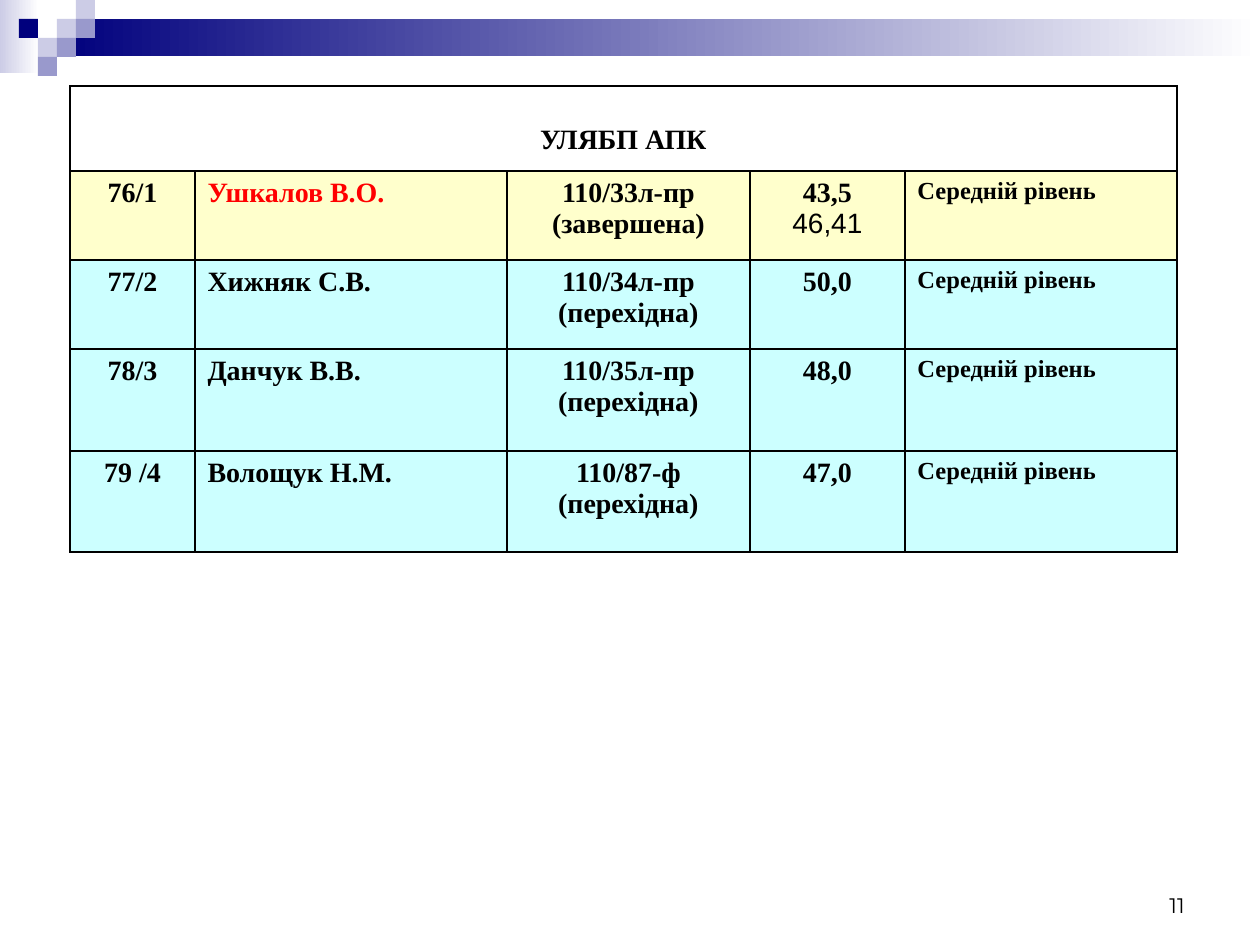
from dataclasses import dataclass

from lxml.etree import SubElement
from pptx import Presentation
from pptx.dml.color import RGBColor as RGB
from pptx.enum.shapes import MSO_SHAPE as Shape
from pptx.enum.text import MSO_ANCHOR as Anchor, PP_ALIGN as Align
from pptx.oxml.ns import qn
from pptx.util import Pt

PX = 914400 // 126


@dataclass(frozen=True)
class Theme:
    white: str = "FFFFFF"
    black: str = "000000"
    red: str = "FF0000"
    navy: str = "00007D"
    violet: str = "9999CC"
    lilac: str = "CCCCE6"
    yellow: str = "FFFFCC"
    cyan: str = "CCFFFF"
    serif: str = "Times New Roman"
    sans: str = "Arial"
    number_font: str = "Montserrat"
    body: int = 16
    level: int = 14
    number: int = 12
    border: int = 1


THEME = Theme()

HEADING = "УЛЯБП АПК"
LEVEL = "Середній рівень"
ROWS = [
    ("76/1", "Ушкалов В.О.", "110/33л-пр\n(завершена)", "43,5\n46,41", LEVEL),
    ("77/2", "Хижняк С.В.", "110/34л-пр\n(перехідна)", "50,0", LEVEL),
    ("78/3", "Данчук В.В.", "110/35л-пр\n(перехідна)", "48,0", LEVEL),
    ("79 /4", "Волощук Н.М.", "110/87-ф\n(перехідна)", "47,0", LEVEL),
]
SLIDE_NUMBER = "11"

TABLE_LEFT, TABLE_TOP = 70, 86
COLUMN_WIDTHS = [125, 312, 243, 155, 272]
COLUMN_ALIGNS = [Align.CENTER, Align.LEFT, Align.CENTER, Align.CENTER, Align.LEFT]
COLUMN_SIZES = [THEME.body] * 4 + [THEME.level]
ROW_HEIGHTS = [85, 89, 89, 102, 101]
HEADING_MARGIN = 38

SQUARE = 19
SQUARES = [  # column, row, colour
    (3, 1, THEME.lilac), (4, 0, THEME.lilac), (4, 1, THEME.violet),
    (2, 2, THEME.lilac), (1, 1, THEME.navy), (3, 2, THEME.violet),
    (2, 3, THEME.violet),
]
BANDS = [  # box, colour that fades to white
    ((0, 0, 39, 73), THEME.lilac),
    ((57, 19, 1203, 37), THEME.navy),
]


def px(*lengths):
    return [length * PX for length in lengths]


def add_rectangle(slide, box, color, fade=False):
    shape = slide.shapes.add_shape(Shape.RECTANGLE, *px(*box))
    shape.shadow.inherit = False
    shape.line.fill.background()
    if fade:
        shape.fill.gradient()
        shape.fill.gradient_angle = 0
        for stop, stop_color in zip(shape.fill.gradient_stops, (color, THEME.white)):
            stop.color.rgb = RGB.from_string(stop_color)
    else:
        shape.fill.solid()
        shape.fill.fore_color.rgb = RGB.from_string(color)


def write(text_frame, text, align, size, font, color=THEME.black, bold=True):
    text_frame.text = text
    for paragraph in text_frame.paragraphs:
        paragraph.alignment = align
        for run in paragraph.runs:
            run.font.size = Pt(size)
            run.font.name = font
            run.font.bold = bold
            run.font.color.rgb = RGB.from_string(color)


def style_cell(cell, color):
    """Give the cell its borders, then its fill."""
    properties = cell._tc.get_or_add_tcPr()
    for side in ("a:lnL", "a:lnR", "a:lnT", "a:lnB"):
        line = SubElement(properties, qn(side), w=str(Pt(THEME.border)))
        SubElement(SubElement(line, qn("a:solidFill")), qn("a:srgbClr"), val=THEME.black)
    cell.fill.solid()
    cell.fill.fore_color.rgb = RGB.from_string(color)


def add_results_table(slide):
    size = sum(COLUMN_WIDTHS), sum(ROW_HEIGHTS)
    table = slide.shapes.add_table(
        len(ROW_HEIGHTS), len(COLUMN_WIDTHS), *px(TABLE_LEFT, TABLE_TOP, *size)
    ).table
    table.first_row = table.horz_banding = False
    for column, width in zip(table.columns, px(*COLUMN_WIDTHS)):
        column.width = width
    for row, height in zip(table.rows, px(*ROW_HEIGHTS)):
        row.height = height

    for cell in table.rows[0].cells:
        style_cell(cell, THEME.white)
    heading = table.cell(0, 0)
    heading.merge(table.cell(0, len(COLUMN_WIDTHS) - 1))
    heading.margin_top = HEADING_MARGIN * PX
    write(heading.text_frame, HEADING, Align.CENTER, THEME.body, THEME.serif)

    for row_index, values in enumerate(ROWS, start=1):
        fill = THEME.yellow if row_index == 1 else THEME.cyan
        for column_index, value in enumerate(values):
            cell = table.cell(row_index, column_index)
            style_cell(cell, fill)
            write(cell.text_frame, value, COLUMN_ALIGNS[column_index],
                  COLUMN_SIZES[column_index], THEME.serif)

    finished_name = table.cell(1, 1).text_frame.paragraphs[0].runs[0]
    finished_name.font.color.rgb = RGB.from_string(THEME.red)
    second_score = table.cell(1, 3).text_frame.paragraphs[1].runs[0]
    second_score.font.name = THEME.sans
    second_score.font.bold = False


def add_slide_number(slide):
    text_frame = slide.shapes.add_textbox(*px(903, 861, 294, 63)).text_frame
    text_frame.word_wrap = True
    text_frame.vertical_anchor = Anchor.BOTTOM
    write(text_frame, SLIDE_NUMBER, Align.RIGHT, THEME.number, THEME.number_font, bold=False)


def main():
    presentation = Presentation()
    presentation.slide_width, presentation.slide_height = px(1260, 945)
    slide = presentation.slides.add_slide(presentation.slide_layouts[6])
    for box, color in BANDS:
        add_rectangle(slide, box, color, fade=True)
    for column, row, color in SQUARES:
        add_rectangle(slide, (column * SQUARE, row * SQUARE, SQUARE, SQUARE), color)
    add_results_table(slide)
    add_slide_number(slide)
    presentation.save("out.pptx")


if __name__ == "__main__":
    main()
